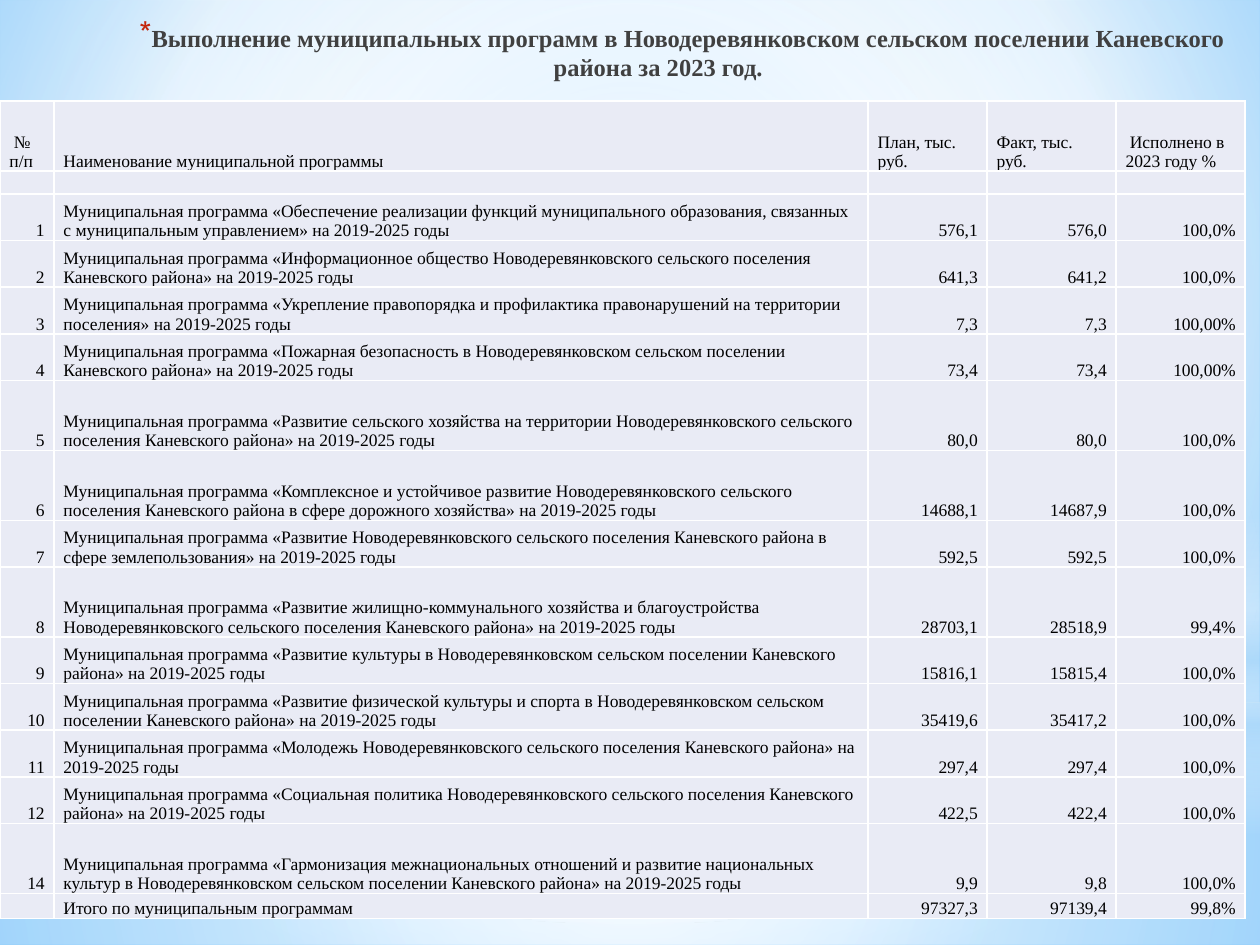
"""Build the slide on the 2023 results of the settlement's municipal programmes."""
from lxml import etree
from pptx import Presentation
from pptx import util as u
from pptx.dml.color import RGBColor
from pptx.enum import shapes, text
from pptx.oxml import ns

THEME = {
    "font": "Times New Roman", "title_size": 14, "cell_size": 10,
    "title": "404040", "bullet": "C3260C", "ink": "000000",
    "cell": "E9EBF5", "border": "FFFFFF", "white": "FFFFFF",
    "haze": "B4DCFA", "sky": "9ED5FF", "deep": "5BB9FF",
}
CENTRE = (50, 50, 50, 50)


def add_xml(parent, tag, index=None, **attrs):
    el = etree.Element(ns.qn(tag), {k: str(v) for k, v in attrs.items()})
    parent.insert(len(parent) if index is None else index, el)
    return el


def paint_gradient(fill, props, stops, focus=None):
    fill.solid()
    solid = props.find(ns.qn("a:solidFill"))
    grad = add_xml(props, "a:gradFill", props.index(solid), rotWithShape=1)
    props.remove(solid)
    stop_list = add_xml(grad, "a:gsLst")
    for pos, color, opacity in stops:
        stop = add_xml(stop_list, "a:gs", pos=pos * 1000)
        clr = add_xml(stop, "a:srgbClr", val=THEME[color])
        if opacity < 100:
            add_xml(clr, "a:alpha", val=opacity * 1000)
    if focus:
        route = add_xml(grad, "a:path", path="circle")
        sides = {k: v * 1000 for k, v in zip("ltrb", focus)}
        add_xml(route, "a:fillToRect", **sides)
    else:
        add_xml(grad, "a:lin", ang=90 * 60000, scaled=0)


prs = Presentation()
prs.slide_width, prs.slide_height = u.Cm(25.4), u.Cm(19.05)
s = prs.slides.add_slide(prs.slide_layouts[5])

bg = s.background.fill
bg.solid()
paint_gradient(bg, s.element.find(".//" + ns.qn("p:bgPr")),
               [(0, "sky", 100), (60, "white", 100), (100, "deep", 100)], (20, 10, 20, 60))

RECT, OVAL = shapes.MSO_SHAPE.RECTANGLE, shapes.MSO_SHAPE.OVAL
layers = [
    (RECT, 14.17, 4.88, [(0, "white", 91), (37, "white", 76), (100, "haze", 79)], CENTRE),
    (RECT, 0, 14.17, [(0, "white", 89), (48, "white", 62), (100, "haze", 79)], CENTRE),
    (RECT, 10.46, 6.35,
     [(0, "white", 1), (29, "white", 30), (45, "haze", 40),
      (55, "white", 26), (65, "haze", 60), (100, "white", 1)], None),
    (OVAL, 4.45, 14.17, [(0, "white", 100), (56, "white", 1)], CENTRE),
]
for kind, top, height, stops, focus in layers:
    sp = s.shapes.add_shape(kind, 0, u.Cm(top), prs.slide_width, u.Cm(height))
    sp.shadow.inherit = False
    sp.line.fill.background()
    paint_gradient(sp.fill, sp.element.spPr, stops, focus)

title = s.shapes.title
s.shapes.element.append(title.element)
title.left, title.top, title.width, title.height = map(u.Cm, (0.43, 0.33, 24.79, 2.59))
tf = title.text_frame
tf.word_wrap = True
tf.auto_size = text.MSO_AUTO_SIZE.NONE
tf.vertical_anchor = text.MSO_ANCHOR.TOP
p = tf.paragraphs[0]
p.alignment = text.PP_ALIGN.CENTER
pPr = p._p.get_or_add_pPr()
pPr.set("marL", str(u.Cm(0.89)))
pPr.set("indent", str(u.Cm(0.97)))
add_xml(add_xml(pPr, "a:buClr"), "a:srgbClr", val=THEME["bullet"])
add_xml(pPr, "a:buSzPct", val=128000)
add_xml(pPr, "a:buChar", char="*")
r = p.add_run()
r.text = ("Выполнение муниципальных программ в Новодеревянковском сельском "
          "поселении Каневского района за 2023 год.")
r.font.name, r.font.size, r.font.bold = THEME["font"], u.Pt(THEME["title_size"]), True
r.font.color.rgb = RGBColor.from_string(THEME["title"])

programmes = [
    ("1", "Обеспечение реализации функций муниципального образования, связанных с муниципальным управлением",
     "576,1", "576,0", "100,0%"),
    ("2", "Информационное общество Новодеревянковского сельского поселения Каневского района",
     "641,3", "641,2", "100,0%"),
    ("3", "Укрепление правопорядка и профилактика правонарушений на территории поселения",
     "7,3", "7,3", "100,00%"),
    ("4", "Пожарная безопасность в Новодеревянковском сельском поселении Каневского района",
     "73,4", "73,4", "100,00%"),
    ("5", "Развитие сельского хозяйства на территории Новодеревянковского сельского поселения Каневского района",
     "80,0", "80,0", "100,0%"),
    ("6", "Комплексное и устойчивое развитие Новодеревянковского сельского поселения Каневского района "
     "в сфере дорожного хозяйства", "14688,1", "14687,9", "100,0%"),
    ("7", "Развитие Новодеревянковского сельского поселения Каневского района в сфере землепользования",
     "592,5", "592,5", "100,0%"),
    ("8", "Развитие жилищно-коммунального хозяйства и благоустройства Новодеревянковского сельского "
     "поселения Каневского района", "28703,1", "28518,9", "99,4%"),
    ("9", "Развитие культуры в Новодеревянковском сельском поселении Каневского района",
     "15816,1", "15815,4", "100,0%"),
    ("10", "Развитие физической культуры и спорта в Новодеревянковском сельском поселении Каневского района",
     "35419,6", "35417,2", "100,0%"),
    ("11", "Молодежь Новодеревянковского сельского поселения Каневского района",
     "297,4", "297,4", "100,0%"),
    ("12", "Социальная политика Новодеревянковского сельского поселения Каневского района",
     "422,5", "422,4", "100,0%"),
    ("14", "Гармонизация межнациональных отношений и развитие национальных культур в Новодеревянковском "
     "сельском поселении Каневского района", "9,9", "9,8", "100,0%"),
]
rows = [
    (" № п/п", "Наименование муниципальной программы", "План, тыс. руб.", "Факт, тыс. руб.",
     " Исполнено в 2023 году %"),
    ("",) * 5,
    *((num, f"Муниципальная программа «{name}» на 2019-2025 годы", *values)
      for num, name, *values in programmes),
    ("", "Итого по муниципальным программам", "97327,3", "97139,4", "99,8%"),
]
col_widths = [1.09, 16.41, 2.4, 2.6, 2.6]
tall_rows = {0, 6, 7, 9, 14}
row_heights = [1.41 if i in tall_rows else 0.94 for i in range(len(rows))]
row_heights[1], row_heights[-1] = 0.46, 0.51

frame = s.shapes.add_table(len(rows), len(col_widths), 0, u.Cm(2.04),
                           u.Cm(sum(col_widths)), u.Cm(sum(row_heights)))
table = frame.table
table.first_row = table.horz_banding = False
for col, width in zip(table.columns, col_widths):
    col.width = u.Cm(width)
for i, (row, height, values) in enumerate(zip(table.rows, row_heights, rows)):
    row.height = u.Cm(height)
    for j, (cell, value) in enumerate(zip(row.cells, values)):
        cell.margin_left = cell.margin_right = u.Cm(0.19)
        cell.margin_top = cell.margin_bottom = 0
        cell.vertical_anchor = text.MSO_ANCHOR.BOTTOM
        cell.fill.solid()
        cell.fill.fore_color.rgb = RGBColor.from_string(THEME["cell"])
        tcPr = cell._tc.get_or_add_tcPr()
        for k, side in enumerate("LRTB"):
            ln = add_xml(tcPr, f"a:ln{side}", k, w=u.Pt(1))
            add_xml(add_xml(ln, "a:solidFill"), "a:srgbClr", val=THEME["border"])
        p = cell.text_frame.paragraphs[0]
        if not value:
            add_xml(p._p, "a:endParaRPr", sz=THEME["cell_size"] * 100)
            continue
        if i and j != 1:
            p.alignment = text.PP_ALIGN.RIGHT
        r = p.add_run()
        r.text = value
        r.font.name, r.font.size = THEME["font"], u.Pt(THEME["cell_size"])
        r.font.color.rgb = RGBColor.from_string(THEME["ink"])

prs.save("out.pptx")
